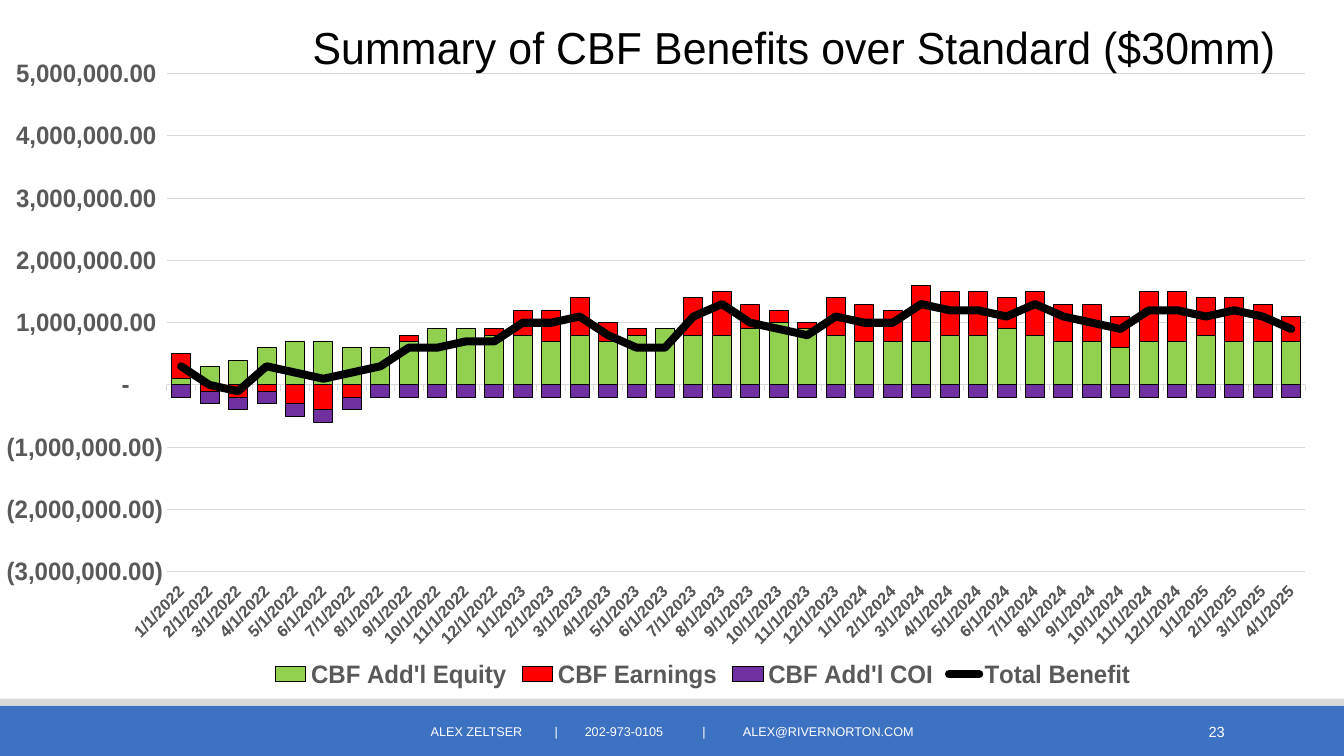
from dataclasses import dataclass
from itertools import accumulate

import pptx
import pptx.chart.data
import pptx.dml.color
import pptx.enum.chart
import pptx.enum.shapes
import pptx.enum.text
import pptx.oxml
import pptx.oxml.ns
import pptx.util
from pptx.util import Pt

qn = pptx.oxml.ns.qn
RGB = pptx.dml.color.RGBColor.from_string
ALIGN = pptx.enum.text.PP_ALIGN


@dataclass(frozen=True)
class Theme:
    font: str = "Arial"
    blue: str = "3D71C1"
    strip: str = "D8D8D8"
    grid: str = "D9D9D9"
    label: str = "595959"
    black: str = "000000"
    white: str = "FFFFFF"
    title_size: float = 32
    value_size: float = 18
    date_size: float = 12
    chart_size: float = 10
    number_size: float = 10.5
    contact_size: float = 9


@dataclass(frozen=True)
class Band:
    top: float
    height: float
    color: str


@dataclass(frozen=True)
class Benefit:
    name: str
    color: str
    line_width: float
    hundred_thousands: tuple[int, ...]  # newest month first


THEME = Theme()
SLIDE_WIDTH, SLIDE_HEIGHT = 960, 540
CHART_HEIGHT = 492.5
BANDS = (Band(504, 36, THEME.blue), Band(499, 5, THEME.strip))
BENEFITS = (
    Benefit("CBF Add'l Equity", "92D050", 0.75, (
        7, 7, 7, 8, 7, 7, 6, 7, 7, 8, 9, 8, 8, 7, 7, 7, 8, 9, 10, 9,
        8, 8, 9, 8, 7, 8, 7, 8, 8, 9, 9, 7, 6, 6, 7, 7, 6, 4, 3, 1)),
    Benefit("CBF Earnings", "FF0000", 0.75, (
        4, 6, 7, 6, 8, 8, 5, 6, 6, 7, 5, 7, 7, 9, 5, 6, 6, 1, 2, 4,
        7, 6, 0, 1, 3, 6, 5, 4, 1, 0, 0, 1, 0, -2, -4, -3, -1, -2, -1, 4)),
    Benefit("CBF Add'l COI", "7030A0", 0.75, (-2,) * 40),
    Benefit("Total Benefit", THEME.black, 6, (
        9, 11, 12, 11, 12, 12, 9, 10, 11, 13, 11, 12, 12, 13, 10, 10, 11, 8, 9, 10,
        13, 11, 6, 6, 8, 11, 10, 10, 7, 7, 6, 6, 3, 2, 1, 2, 3, -1, 0, 3)),
)
# Date serials of the first of each month, January 2022 to April 2025
YEAR = (31, 28, 31, 30, 31, 30, 31, 31, 30, 31, 30, 31)
LEAP_YEAR = (31, 29) + YEAR[2:]
MONTHS = tuple(accumulate(YEAR * 2 + LEAP_YEAR + YEAR[:3], initial=44562))


def set_font(font, size: float, color: str, bold: bool = False) -> None:
    font.name, font.size, font.bold = THEME.font, Pt(size), bold
    font.color.rgb = RGB(color)


def add_text(slide, text: str, left: float, top: float, width: float, height: float, *,
             size: float, color: str, align=ALIGN.LEFT, inset: float = 7.2,
             tabs: tuple[float, ...] = ()) -> None:
    frame = slide.shapes.add_textbox(Pt(left), Pt(top), Pt(width), Pt(height)).text_frame
    frame.word_wrap = True
    frame.vertical_anchor = pptx.enum.text.MSO_ANCHOR.MIDDLE
    frame.margin_left = Pt(inset)
    paragraph = frame.paragraphs[0]
    paragraph.alignment = align
    if tabs:
        tab_list = pptx.oxml.parse_xml(
            f'<a:tabLst {pptx.oxml.ns.nsdecls("a")}>'
            + "".join(f'<a:tab pos="{Pt(stop)}" algn="l"/>' for stop in tabs)
            + "</a:tabLst>")
        paragraph._p.get_or_add_pPr().append(tab_list)
    run = paragraph.add_run()
    run.text = text
    set_font(run.font, size, color)


def add_band(slide, band: Band) -> None:
    bar = slide.shapes.add_shape(pptx.enum.shapes.MSO_SHAPE.RECTANGLE,
                                 0, Pt(band.top), Pt(SLIDE_WIDTH), Pt(band.height))
    bar.shadow.inherit = False
    bar.fill.solid()
    bar.fill.fore_color.rgb = RGB(band.color)
    bar.line.fill.background()


def place(element, index: int, inner: bool = False, **points: float) -> None:
    """Give a chart part a manual layout, in points within the chart area."""
    for automatic in element.findall(qn("c:layout")):
        element.remove(automatic)
    target = '<c:layoutTarget val="inner"/>' if inner else ""
    modes = '<c:xMode val="edge"/><c:yMode val="edge"/>'
    extent = {"x": SLIDE_WIDTH, "w": SLIDE_WIDTH, "y": CHART_HEIGHT, "h": CHART_HEIGHT}
    sides = "".join(f'<c:{side} val="{value / extent[side]}"/>'
                    for side, value in points.items())
    element.insert(index, pptx.oxml.parse_xml(
        f'<c:layout {pptx.oxml.ns.nsdecls("c")}><c:manualLayout>'
        f"{target}{modes}{sides}</c:manualLayout></c:layout>"))


def move_total_to_line(chart) -> None:
    """Turn the last stacked series into a line on the same axes."""
    columns = chart._chartSpace.find(".//" + qn("c:barChart"))
    total = columns.findall(qn("c:ser"))[-1]
    for flag in total.findall(qn("c:invertIfNegative")):
        total.remove(flag)
    axes = "".join(f'<c:axId val="{axis.get("val")}"/>'
                   for axis in columns.findall(qn("c:axId")))
    line_plot = pptx.oxml.parse_xml(
        f'<c:lineChart {pptx.oxml.ns.nsdecls("c")}><c:grouping val="standard"/>'
        f'<c:varyColors val="0"/><c:marker val="1"/>{axes}</c:lineChart>')
    line_plot.insert(2, total)
    columns.addnext(line_plot)


def format_axes(chart) -> None:
    enums = pptx.enum.chart
    dates, amounts = chart.category_axis, chart.value_axis
    # Dates: a time axis sorts the months from oldest to newest
    for automatic in dates._element.findall(qn("c:auto")):
        automatic.set("val", "1")
    dates.tick_label_position = enums.XL_TICK_LABEL_POSITION.LOW
    dates.major_tick_mark = enums.XL_TICK_MARK.OUTSIDE
    dates.tick_labels.number_format = "m/d/yyyy"
    dates.tick_labels.number_format_is_linked = False
    set_font(dates.tick_labels.font, THEME.date_size, THEME.label, bold=True)
    dates._element.find(qn("c:txPr")).find(qn("a:bodyPr")).set("rot", "-2700000")
    # Amounts
    amounts.minimum_scale, amounts.maximum_scale = -3_000_000, 5_000_000
    amounts.major_unit = 1_000_000
    amounts.major_tick_mark = enums.XL_TICK_MARK.NONE
    amounts.tick_labels.number_format = (
        '_(* #,##0.00_);_(* \\(#,##0.00\\);_(* "-"??_);_(@_)')
    amounts.tick_labels.number_format_is_linked = False
    set_font(amounts.tick_labels.font, THEME.value_size, THEME.label, bold=True)
    amounts.format.line.fill.background()
    for rule in (dates.format.line, amounts.major_gridlines.format.line):
        rule.color.rgb = RGB(THEME.grid)
        rule.width = Pt(0.75)


def add_benefits_chart(slide) -> None:
    data = pptx.chart.data.CategoryChartData(number_format="#,##0.00")
    data.categories = MONTHS[::-1]
    data.categories.number_format = "m/d/yyyy"
    for benefit in BENEFITS:
        data.add_series(benefit.name, [n * 100_000 for n in benefit.hundred_thousands])
    chart = slide.shapes.add_chart(pptx.enum.chart.XL_CHART_TYPE.COLUMN_STACKED, 0, Pt(2.9),
                                   Pt(SLIDE_WIDTH), Pt(CHART_HEIGHT), data).chart
    set_font(chart.font, THEME.chart_size, THEME.black)
    move_total_to_line(chart)
    columns, total_line = chart.plots
    columns.gap_width, columns.overlap = 50, 100
    columns.vary_by_categories = False

    # Series colours
    for series, benefit in zip(chart.series, BENEFITS):
        series.format.line.color.rgb = RGB(THEME.black)
        series.format.line.width = Pt(benefit.line_width)
    for series, benefit in zip(columns.series, BENEFITS):
        series.invert_if_negative = False
        series.format.fill.solid()
        series.format.fill.fore_color.rgb = RGB(benefit.color)
    for total in total_line.series:
        total.smooth = False
        total.marker.style = pptx.enum.chart.XL_MARKER_STYLE.NONE
        stroke = total._element.find(qn("c:spPr")).find(qn("a:ln"))
        stroke.set("cap", "rnd")
        stroke.append(pptx.oxml.parse_xml(f'<a:round {pptx.oxml.ns.nsdecls("a")}/>'))

    format_axes(chart)

    # Title, legend and plot area
    chart.has_title = True
    heading = chart.chart_title.text_frame.paragraphs[0].add_run()
    heading.text = "Summary of CBF Benefits over Standard ($30mm)"
    set_font(heading.font, THEME.title_size, THEME.black)
    title = chart.chart_title._element
    place(title, 1, x=182, y=4)
    title.find(qn("c:overlay")).set("val", "1")
    chart.has_legend = True
    chart.legend.position = pptx.enum.chart.XL_LEGEND_POSITION.BOTTOM
    chart.legend.include_in_layout = False
    set_font(chart.legend.font, THEME.value_size, THEME.label, bold=True)
    place(chart._chartSpace.find(".//" + qn("c:plotArea")), 0, inner=True,
          x=78.7, y=49.7, w=852.5, h=356)


def main() -> None:
    deck = pptx.Presentation()
    deck.slide_width, deck.slide_height = Pt(SLIDE_WIDTH), Pt(SLIDE_HEIGHT)
    slide = deck.slides.add_slide(deck.slide_layouts[6])
    for band in BANDS:
        add_band(slide, band)
    add_text(slide, "23", 779, 508.3, 103, 28.8, size=THEME.number_size,
             color=THEME.white, align=ALIGN.RIGHT)
    add_benefits_chart(slide)
    add_text(slide, "ALEX ZELTSER\t|\t202-973-0105\t|\tALEX@RIVERNORTON.COM",
             290, 508.3, 380, 28.8, size=THEME.contact_size, color=THEME.white,
             inset=17.7, tabs=(88.5, 110, 194, 223))
    deck.save("out.pptx")


if __name__ == "__main__":
    main()
